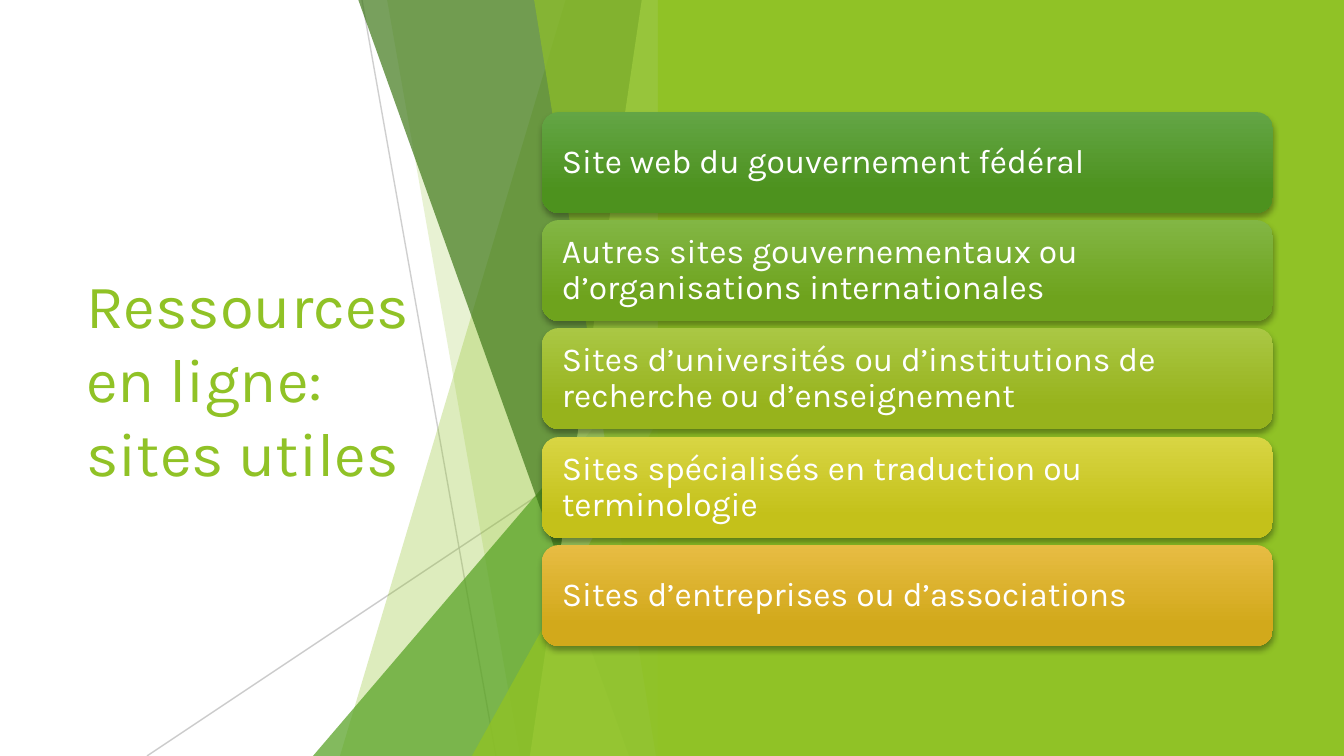
from dataclasses import dataclass

from lxml.etree import SubElement
from pptx import Presentation
from pptx.dml.color import RGBColor
from pptx.enum.shapes import MSO_CONNECTOR, MSO_SHAPE
from pptx.enum.text import MSO_ANCHOR
from pptx.oxml.ns import qn
from pptx.util import Emu, Pt

PX = 914400 / 134.4
WIDTH, HEIGHT = 1344, 756


def px(n):
    return Emu(round(n * PX))


@dataclass(frozen=True)
class Theme:
    font: str = "Karla"
    title_size: int = 33
    card_size: int = 18
    white: str = "FFFFFF"
    black: str = "000000"
    gray: str = "BFBFBF"
    lime: str = "90C226"
    green: str = "54A021"
    forest: str = "3F7819"
    pale: str = "C0E474"


class Deck:
    def __init__(self, theme):
        self.theme = theme
        self.prs = Presentation()
        self.prs.slide_width, self.prs.slide_height = px(WIDTH), px(HEIGHT)
        self.s = self.prs.slides.add_slide(self.prs.slide_layouts[6])
        self.s.background.fill.solid()
        self.s.background.fill.fore_color.rgb = RGBColor.from_string(theme.white)

    def set_alpha(self, sp, percent):
        color = sp._element.spPr.find(".//" + qn("a:srgbClr"))
        SubElement(color, qn("a:alpha")).set("val", str(percent * 1000))

    def paint(self, sp, color, alpha=100):
        sp.shadow.inherit = False
        sp.line.fill.background()
        sp.fill.solid()
        sp.fill.fore_color.rgb = RGBColor.from_string(color)
        if alpha < 100:
            self.set_alpha(sp, alpha)

    def line(self, x1, y1, x2, y2, alpha):
        c = self.s.shapes.add_connector(MSO_CONNECTOR.STRAIGHT, px(x1), px(y1), px(x2), px(y2))
        c.line.width = Pt(0.75)
        c.line.color.rgb = RGBColor.from_string(self.theme.gray)
        self.set_alpha(c, alpha)
        SubElement(c._element.spPr, qn("a:effectLst"))

    def facet(self, top_x, bottom_x, right, color, alpha):
        fb = self.s.shapes.build_freeform(top_x, -1, scale=PX)
        fb.add_line_segments([(right, -1), (right, HEIGHT), (bottom_x, HEIGHT)], close=True)
        self.paint(fb.convert_to_shape(), color, alpha)

    def triangle(self, x, y, right, color, alpha):
        sp = self.s.shapes.add_shape(MSO_SHAPE.ISOSCELES_TRIANGLE,
                                     px(x), px(y), px(right - x), px(HEIGHT - y))
        sp.adjustments[0] = 1
        self.paint(sp, color, alpha)

    def panel(self, x, color):
        sp = self.s.shapes.add_shape(MSO_SHAPE.RECTANGLE, px(x), 0, px(WIDTH - x), px(HEIGHT))
        self.paint(sp, color)

    def add_text(self, sp, text, size, color):
        tf = sp.text_frame
        tf.word_wrap = True
        tf.vertical_anchor = MSO_ANCHOR.MIDDLE
        p = tf.paragraphs[0]
        r = p.add_run()
        r.text = text
        r.font.name, r.font.size = self.theme.font, Pt(size)
        r.font.color.rgb = RGBColor.from_string(color)
        return tf, p

    def title(self, x, y, w, h, text):
        sp = self.s.shapes.add_textbox(px(x), px(y), px(w), px(h))
        self.add_text(sp, text, self.theme.title_size, self.theme.lime)

    def card(self, x, y, w, h, text, top_color, bottom_color):
        sp = self.s.shapes.add_shape(MSO_SHAPE.ROUNDED_RECTANGLE, px(x), px(y), px(w), px(h))
        sp.line.fill.background()
        sp.fill.gradient()
        sp.fill.gradient_angle = 270
        stops = zip(sp.fill.gradient_stops, (0, 0.78), (top_color, bottom_color))
        for stop, position, color in stops:
            stop.position = position
            stop.color.rgb = RGBColor.from_string(color)
        self.drop_shadow(sp)
        tf, p = self.add_text(sp, text, self.theme.card_size, self.theme.white)
        tf.margin_left = tf.margin_right = px(15)
        p.alignment = PP_ALIGN.LEFT
        p.line_spacing = 0.9

    def drop_shadow(self, sp):
        sp.shadow.inherit = False
        effects = sp._element.spPr.find(qn("a:effectLst"))
        shadow = SubElement(effects, qn("a:outerShdw"), blurRad=str(Pt(3)), dist=str(Pt(2)),
                            dir="5400000", rotWithShape="0")
        color = SubElement(shadow, qn("a:srgbClr"), val=self.theme.black)
        SubElement(color, qn("a:alpha"), val="35000")


from pptx.enum.text import PP_ALIGN


def main():
    theme = Theme()
    deck = Deck(theme)

    # Title
    deck.title(73, 152, 391, 452, "Ressources en ligne: sites utiles")

    # Faceted band, from back to front
    right = 672
    deck.line(362, 0, 496, HEIGHT, 75)
    deck.line(right, 406, 147, HEIGHT, 80)
    deck.facet(566, 340, right, theme.lime, 30)
    deck.facet(387, 520, right, theme.lime, 20)
    deck.triangle(313, 336, right, theme.green, 72)
    deck.facet(358, 629, right, theme.forest, 70)
    deck.facet(642, 530, right, theme.pale, 70)
    deck.facet(534, 656, right, theme.lime, 65)
    deck.triangle(472, 395, right, theme.lime, 80)

    # Right-hand panel
    deck.panel(658, theme.lime)

    # Cards, evenly spread from first to last
    cards = [
        ("Site web du gouvernement fédéral", "63A545", "4D921E"),
        ("Autres sites gouvernementaux ou d’organisations internationales", "82B644", "6EA31D"),
        ("Sites d’universités ou d’institutions de recherche ou d’enseignement",
         "AAC744", "97B31C"),
        ("Sites spécialisés en traduction ou terminologie", "D8D543", "C4C11A"),
        ("Sites d’entreprises ou d’associations", "E7BC43", "D2A91B"),
    ]
    first, last = 112, 545
    for i, (text, top_color, bottom_color) in enumerate(cards):
        y = first + round(i * (last - first) / (len(cards) - 1))
        deck.card(542, y, 731, 101, text, top_color, bottom_color)

    deck.prs.save("out.pptx")


if __name__ == "__main__":
    main()
